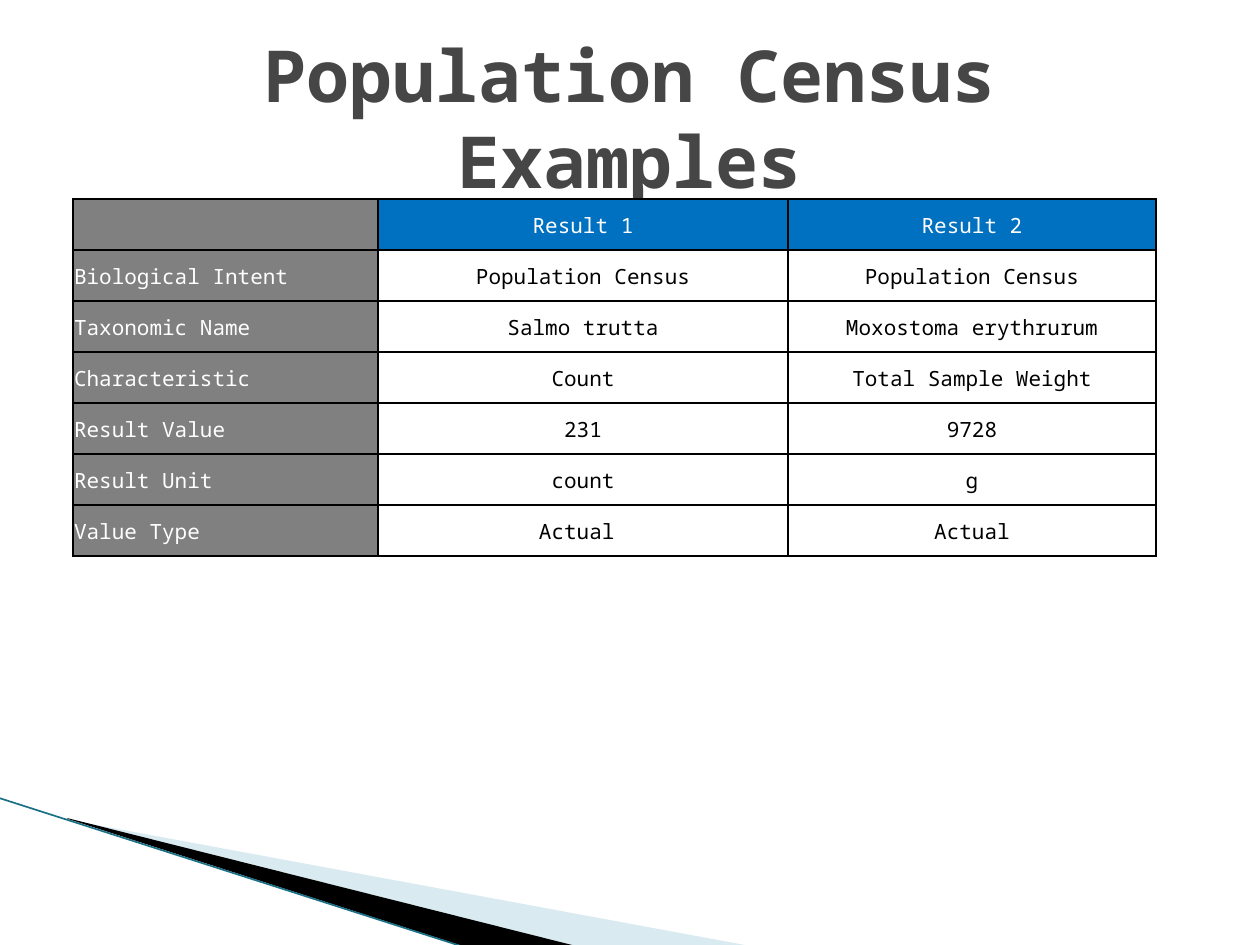
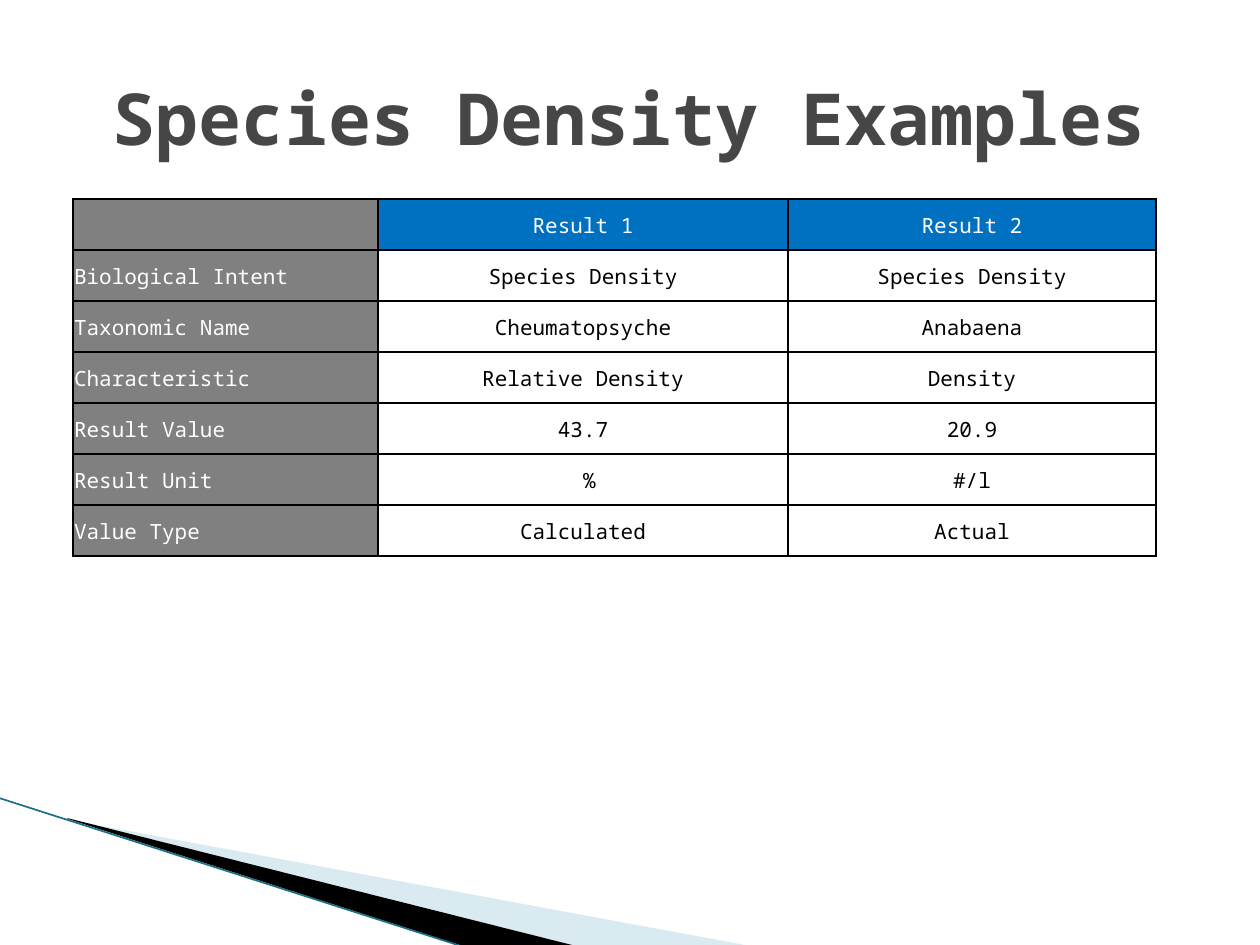
"""Build two slides of census and density examples in one shared style."""
import pptx
import pptx.dml.color
import pptx.enum.shapes
import pptx.enum.text
import pptx.oxml
import pptx.oxml.ns
import pptx.util

SCALE = 914400 / 126
FONT = "Noto Sans Mono"
HUES = {
    "title": "464646", "side": "808080", "head": "0070C0", "white": "FFFFFF",
    "black": "000000", "pale": "A0CBDC", "teal": "1B7085",
}
ALIGN = pptx.enum.text.PP_ALIGN
MIDDLE = pptx.enum.text.MSO_ANCHOR.MIDDLE
WIDTHS = (305, 410, 368)
ROW = 51
LABELS = ("", "Biological Intent", "Taxonomic Name", "Characteristic",
          "Result Value", "Result Unit", "Value Type")
SLIDES = {
    "Population Census Examples": (
        ("Result 1", "Population Census", "Salmo trutta", "Count",
         "231", "count", "Actual "),
        ("Result 2", "Population Census", "Moxostoma erythrurum",
         "Total Sample Weight", "9728", "g", "Actual"),
    ),
    "Species Density Examples": (
        ("Result 1", "Species Density", "Cheumatopsyche", "Relative Density",
         "43.7", " %", "Calculated"),
        ("Result 2", "Species Density", "Anabaena", "Density",
         "20.9", "#/l", "Actual"),
    ),
}


def emu(px):
    return pptx.util.Emu(round(px * SCALE))


def rgb(hue):
    return pptx.dml.color.RGBColor.from_string(HUES[hue])


def paint(fill, hue):
    fill.solid()
    fill.fore_color.rgb = rgb(hue)


def style(frame, size, hue, align, bold=False):
    para = frame.paragraphs[0]
    para.alignment = align
    for run in para.runs:
        run.font.name = FONT
        run.font.size = pptx.util.Pt(size)
        run.font.bold = bold
        run.font.color.rgb = rgb(hue)


def wedge(slide, points, hue, alpha=100):
    pen = slide.shapes.build_freeform(*points[0], scale=SCALE)
    pen.add_line_segments(points[1:])
    shape = pen.convert_to_shape()
    shape.shadow.inherit = False
    shape.line.fill.background()
    paint(shape.fill, hue)
    if alpha < 100:
        color = shape.fill._xPr.find(".//" + pptx.oxml.ns.qn("a:srgbClr"))
        color.append(pptx.oxml.parse_xml(
            f'<a:alpha {pptx.oxml.ns.nsdecls("a")} val="{alpha * 1000}"/>'))


def stroke(slide, start, end, hue):
    kind = pptx.enum.shapes.MSO_CONNECTOR.STRAIGHT
    line = slide.shapes.add_connector(kind, *map(emu, start + end))
    line.line.color.rgb = rgb(hue)
    line.line.width = pptx.util.Pt(0.95)
    line._element.spPr.append(pptx.oxml.parse_xml(
        f'<a:effectLst {pptx.oxml.ns.nsdecls("a")}/>'))


def swoosh(slide):
    wedge(slide, [(69, 820), (750, 946), (575, 946), (69, 819)], "pale", 40)
    wedge(slide, [(67, 818), (576, 946), (469, 948), (68, 819)], "black")
    stroke(slide, (-1, 798), (467, 948), "teal")


def title(slide, text):
    box = slide.shapes.add_textbox(*map(emu, (63, 38, 1134, 157)))
    frame = box.text_frame
    frame.word_wrap = True
    frame.vertical_anchor = MIDDLE
    frame.text = text
    style(frame, 41, "title", ALIGN.CENTER, bold=True)


def edge(cell):
    props = cell._tc.get_or_add_tcPr()
    for side in "LRTB":
        props.append(pptx.oxml.parse_xml(
            f'<a:ln{side} {pptx.oxml.ns.nsdecls("a")} w="12700"><a:solidFill>'
            f'<a:srgbClr val="{HUES["black"]}"/></a:solidFill></a:ln{side}>'))


def fill_cell(cell, text, row, col):
    edge(cell)
    back = "side" if col == 0 else "head" if row == 0 else "white"
    paint(cell.fill, back)
    cell.margin_left = cell.margin_right = cell.margin_top = emu(1)
    cell.margin_bottom = 0
    cell.vertical_anchor = MIDDLE
    cell.text_frame.text = text
    style(cell.text_frame, 12, "black" if back == "white" else "white",
          ALIGN.CENTER if col else ALIGN.LEFT)


def grid(slide, columns):
    count = len(LABELS)
    place = map(emu, (73, 199, sum(WIDTHS), ROW * count))
    table = slide.shapes.add_table(count, len(columns), *place).table
    for col, texts in enumerate(columns):
        table.columns[col].width = emu(WIDTHS[col])
        for row, text in enumerate(texts):
            table.rows[row].height = emu(ROW)
            fill_cell(table.cell(row, col), text, row, col)


def main():
    deck = pptx.Presentation()
    deck.slide_width, deck.slide_height = emu(1260), emu(945)
    for name, results in SLIDES.items():
        slide = deck.slides.add_slide(deck.slide_layouts[6])
        swoosh(slide)
        title(slide, name)
        grid(slide, (LABELS, *results))
    deck.save("out.pptx")


if __name__ == "__main__":
    main()
